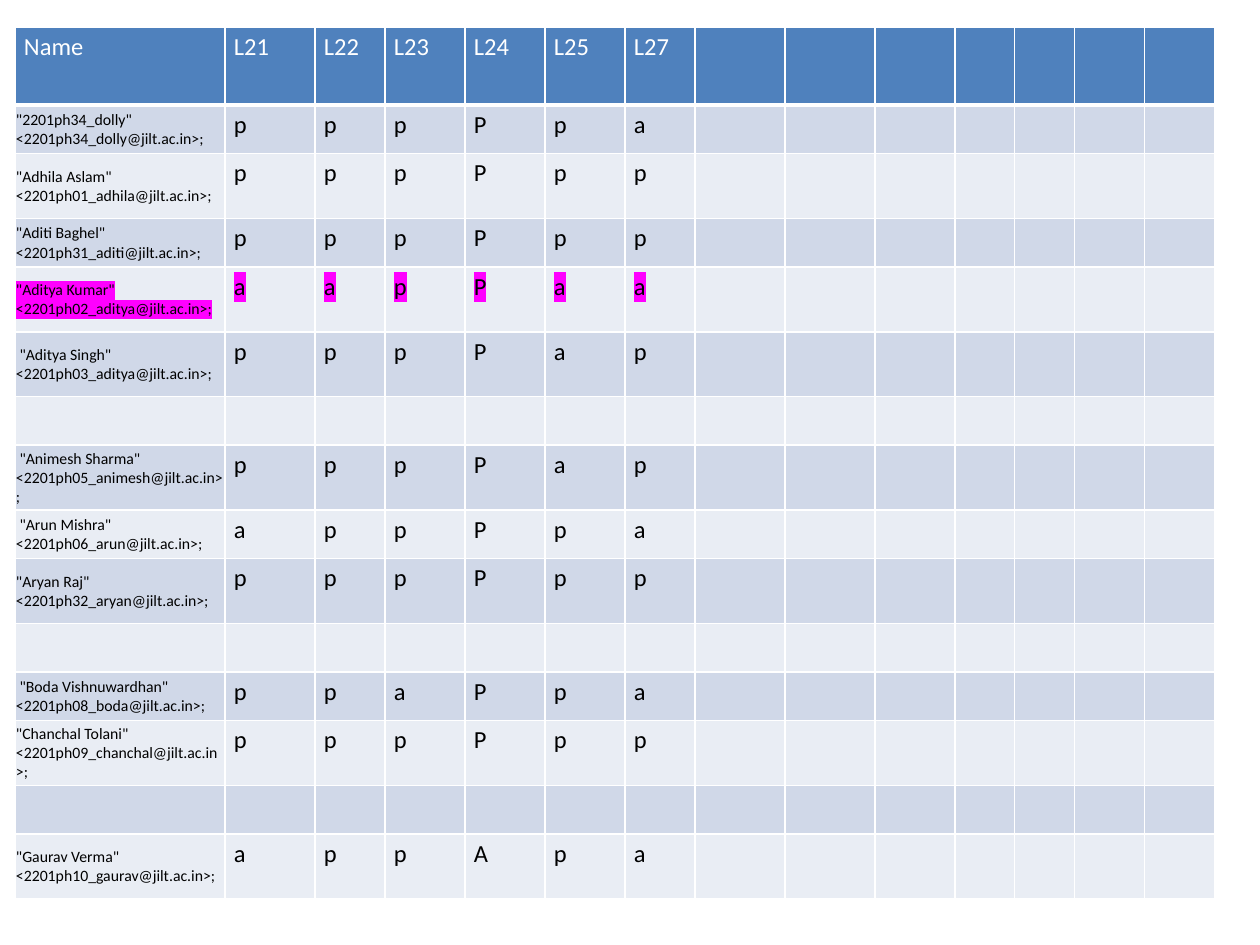
from dataclasses import dataclass

from lxml import etree
from pptx import Presentation
from pptx import util as u
from pptx.dml.color import RGBColor
from pptx.enum import text
from pptx.oxml import ns

PX = u.Inches(1) // 126


@dataclass(frozen=True)
class Theme:
    font: str = "Calibri"
    header: str = "4F81BD"
    bands: tuple = ("E9EDF4", "D0D8E8")
    white: str = "FFFFFF"
    ink: str = "000000"
    marker: str = "FF00FF"
    body_size: int = 14
    name_size: int = 9


theme = Theme()


def write(cell, words, size=theme.body_size, color=theme.ink, highlight=None):
    span = cell.text_frame.paragraphs[0].add_run()
    span.text = words
    span.font.size = u.Pt(size)
    span.font.bold = False
    span.font.color.rgb = RGBColor.from_string(color)
    if highlight:
        mark = etree.SubElement(span.font._element, ns.qn("a:highlight"))
        etree.SubElement(mark, ns.qn("a:srgbClr"), val=highlight)
    span.font.name = theme.font


def paint(cell, fill, bottom=1):
    """Fill a cell and give it white borders, with the bottom width in points."""
    cell.fill.solid()
    cell.fill.fore_color.rgb = RGBColor.from_string(fill)
    properties = cell._tc.get_or_add_tcPr()
    widths = {"lnL": 1, "lnR": 1, "lnT": 1, "lnB": bottom}
    for position, (side, width) in enumerate(widths.items()):
        line = etree.Element(ns.qn(f"a:{side}"), w=str(u.Pt(width)))
        solid = etree.SubElement(line, ns.qn("a:solidFill"))
        etree.SubElement(solid, ns.qn("a:srgbClr"), val=theme.white)
        properties.insert(position, line)


SHORT, TALL = 48, 65
DOMAIN = "jilt.ac.in"
headings = ["Name", "L21", "L22", "L23", "L24", "L25", "L27"]
column_widths = [210, 90, 70, 80, 80, 80, 70, 90, 90, 80, 60, 60, 70, 70]

# Row height, name, mailbox, one mark per lecture
students = [
    (SHORT, '"2201ph34_dolly"', "2201ph34_dolly", "pppPpa"),
    (TALL, '"Adhila Aslam"', "2201ph01_adhila", "pppPpp"),
    (SHORT, '"Aditi Baghel"', "2201ph31_aditi", "pppPpp"),
    (TALL, '"Aditya Kumar"', "2201ph02_aditya", "aapPaa"),
    (TALL, ' "Aditya Singh"', "2201ph03_aditya", "pppPap"),
    (SHORT, "", "", ""),
    (TALL, ' "Animesh Sharma"', "2201ph05_animesh", "pppPap"),
    (SHORT, ' "Arun Mishra"', "2201ph06_arun", "appPpa"),
    (TALL, '"Aryan Raj"', "2201ph32_aryan", "pppPpp"),
    (SHORT, "", "", ""),
    (SHORT, ' "Boda Vishnuwardhan"', "2201ph08_boda", "ppaPpa"),
    (TALL, '"Chanchal Tolani"', "2201ph09_chanchal", "pppPpp"),
    (SHORT, "", "", ""),
    (TALL, '"Gaurav Verma"', "2201ph10_gaurav", "appApa"),
]
highlighted = "2201ph02_aditya"
row_heights = [78] + [student[0] for student in students]

deck = Presentation()
deck.slide_width, deck.slide_height = 1260 * PX, 945 * PX
page = deck.slides.add_slide(deck.slide_layouts[6])

attendance = page.shapes.add_table(
    len(row_heights), len(column_widths), 15 * PX, 27 * PX,
    sum(column_widths) * PX, sum(row_heights) * PX,
).table
for column, width in zip(attendance.columns, column_widths):
    column.width = width * PX
for row, height in zip(attendance.rows, row_heights):
    row.height = height * PX

for row_number, row in enumerate(attendance.rows):
    for cell in row.cells:
        cell.margin_left = cell.margin_right = 9 * PX
        cell.margin_top = cell.margin_bottom = 5 * PX
        if row_number == 0:
            paint(cell, theme.header, bottom=3)
        else:
            paint(cell, theme.bands[row_number % 2])

for column_number, heading in enumerate(headings):
    write(attendance.cell(0, column_number), heading, color=theme.white)

for row_number, (_, name, mailbox, marks) in enumerate(students, start=1):
    if not name:
        continue
    highlight = theme.marker if mailbox == highlighted else None
    name_cell = attendance.cell(row_number, 0)
    name_cell.vertical_anchor = text.MSO_ANCHOR.MIDDLE
    name_cell.margin_left = name_cell.margin_right = name_cell.margin_top = PX
    name_cell.margin_bottom = 0
    write(name_cell, f"{name} <{mailbox}@{DOMAIN}>;", size=theme.name_size,
          highlight=highlight)
    for column_number, mark in enumerate(marks, start=1):
        write(attendance.cell(row_number, column_number), mark, highlight=highlight)

deck.save("out.pptx")
